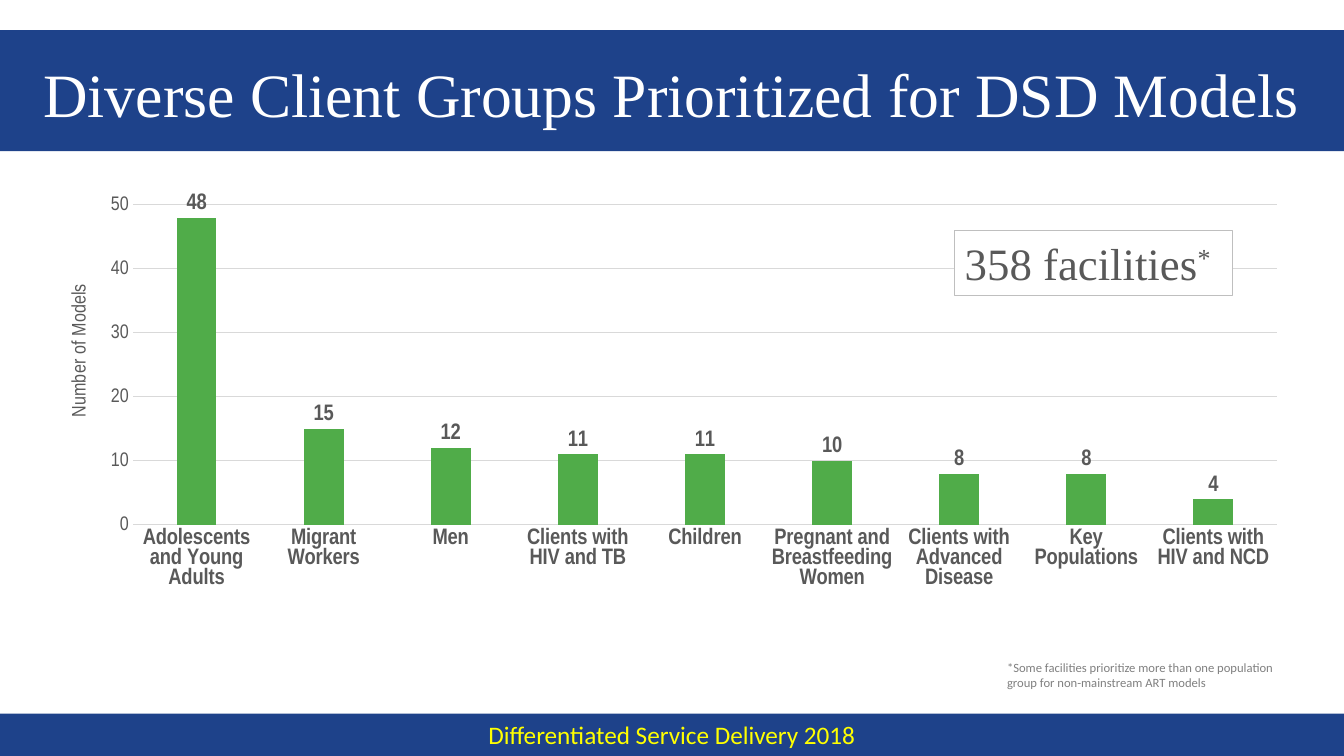
from lxml import etree
from pptx import Presentation
from pptx.chart.data import CategoryChartData
from pptx.dml.color import RGBColor
from pptx.enum.chart import XL_CHART_TYPE, XL_LABEL_POSITION, XL_TICK_MARK
from pptx.enum.shapes import MSO_SHAPE
from pptx.enum.text import MSO_ANCHOR, PP_ALIGN
from pptx.oxml.ns import qn
from pptx.util import Inches, Pt

COLUMN = XL_CHART_TYPE.COLUMN_CLUSTERED
OUTSIDE_END = XL_LABEL_POSITION.OUTSIDE_END
NO_TICK = XL_TICK_MARK.NONE
RECT = MSO_SHAPE.RECTANGLE
TOP, MIDDLE = MSO_ANCHOR.TOP, MSO_ANCHOR.MIDDLE
LEFT, CENTER = PP_ALIGN.LEFT, PP_ALIGN.CENTER

WIDTH, HEIGHT = Inches(13.33), Inches(7.5)
SERIF, SANS, NARROW = "Times New Roman", "Calibri", "Arial Narrow"
COLORS = {
    "band": "1E428A",
    "white": "FFFFFF",
    "footer": "FFFF00",
    "bar": "50AC49",
    "text": "595959",
    "note": "808080",
    "grid": "D9D9D9",
    "border": "BFBFBF",
}
MODELS = {
    "Adolescents and Young Adults": 48,
    "Migrant Workers": 15,
    "Men": 12,
    "Clients with HIV and TB": 11,
    "Children": 11,
    "Pregnant and Breastfeeding Women": 10,
    "Clients with Advanced Disease": 8,
    "Key Populations": 8,
    "Clients with HIV and NCD": 4,
}


def rgb(name):
    return RGBColor.from_string(COLORS[name])


def share(left, top, width, height):
    return (
        int(WIDTH * left / 100),
        int(HEIGHT * top / 100),
        int(WIDTH * width / 100),
        int(HEIGHT * height / 100),
    )


def set_font(font, name, size, color, bold=False):
    font.name, font.size, font.bold = name, Pt(size), bold
    font.color.rgb = rgb(color)


def set_line(line, color):
    line.color.rgb = rgb(color)
    line.width = Pt(0.75)


def add_rect(s, box, fill, border=None):
    sp = s.shapes.add_shape(RECT, *box)
    sp.shadow.inherit = False
    sp.fill.solid()
    sp.fill.fore_color.rgb = rgb(fill)
    if border:
        set_line(sp.line, border)
    else:
        sp.line.fill.background()
    return sp


def write(sp, text, font, size, color, align=LEFT, anchor=TOP):
    tf = sp.text_frame
    tf.word_wrap = True
    tf.vertical_anchor = anchor
    p = tf.paragraphs[0]
    p.alignment = align
    p.add_run().text = text
    set_font(p.font, font, size, color)
    return p


def add_header(s, box):
    left, top, width, height = box
    add_rect(s, box, "band")
    sp = s.shapes.add_textbox(left, top, width, int(height * 1.04))
    write(sp, "Diverse Client Groups Prioritized for DSD Models",
          SERIF, 44, "white", CENTER, MIDDLE)


def add_footer(s, box):
    sp = add_rect(s, box, "band")
    write(sp, "Differentiated Service Delivery 2018",
          SANS, 18, "footer", CENTER, MIDDLE)


def set_layout(parent, index, **values):
    for old in parent.findall(qn("c:layout")):
        parent.remove(old)
    layout = etree.Element(qn("c:layout"))
    manual = etree.SubElement(layout, qn("c:manualLayout"))
    for tag, value in values.items():
        etree.SubElement(manual, qn(f"c:{tag}")).set("val", str(value))
    parent.insert(index, layout)


def add_models_chart(s, box):
    data = CategoryChartData()
    data.categories = list(MODELS)
    data.add_series("Series 1", list(MODELS.values()))
    chart = s.shapes.add_chart(COLUMN, *box, data).chart
    chart.has_legend = chart.has_title = False
    chart.font.name, chart.font.size = SANS, Pt(10)

    plot = chart.plots[0]
    plot.gap_width = 219
    plot.vary_by_categories = False
    plot.has_data_labels = True
    labels = plot.data_labels
    labels.show_value = True
    labels.position = OUTSIDE_END
    set_font(labels.font, NARROW, 16, "text", True)
    fill = plot.series[0].format.fill
    fill.solid()
    fill.fore_color.rgb = rgb("bar")

    groups, counts = chart.category_axis, chart.value_axis
    for axis, size, bold in ((groups, 16, True), (counts, 14, False)):
        axis.major_tick_mark = axis.minor_tick_mark = NO_TICK
        set_font(axis.tick_labels.font, NARROW, size, "text", bold)
    set_line(groups.format.line, "grid")
    counts.format.line.fill.background()
    set_line(counts.major_gridlines.format.line, "grid")
    counts.minimum_scale, counts.maximum_scale, counts.major_unit = 0, 50, 10

    title = counts.axis_title
    p = title.text_frame.paragraphs[0]
    p.add_run().text = "Number of Models"
    set_font(p.font, NARROW, 14, "text")
    title.text_frame._txBody.bodyPr.set("rot", "-5400000")
    set_layout(title._element, 1, xMode="edge", yMode="edge", x=0.02, y=0.22)
    set_layout(plot._element.getparent(), 0, layoutTarget="inner",
               xMode="edge", yMode="edge", x=0.075, y=0.059, w=0.925, h=0.684)


def add_facility_count(s, box):
    sp = add_rect(s, box, "white", "border")
    p = write(sp, "358 facilities", SERIF, 32, "text")
    r = p.add_run()
    r.text = "*"
    r.font._element.set("baseline", "30000")


def add_note(s, box):
    sp = s.shapes.add_textbox(*box)
    write(sp, "*Some facilities prioritize more than one population group "
          "for non-mainstream ART models", SANS, 9, "note")


def main():
    prs = Presentation()
    prs.slide_width, prs.slide_height = WIDTH, HEIGHT
    s = prs.slides.add_slide(prs.slide_layouts[6])
    add_header(s, share(0, 4, 100, 16))
    add_footer(s, share(0, 94.4, 100, 5.6))
    add_models_chart(s, share(3, 23.47, 92.05, 61.87))
    add_facility_count(s, share(71.04, 30.53, 20.63, 8.53))
    add_note(s, share(74.19, 86.67, 21.38, 5.33))
    prs.save("out.pptx")


if __name__ == "__main__":
    main()
